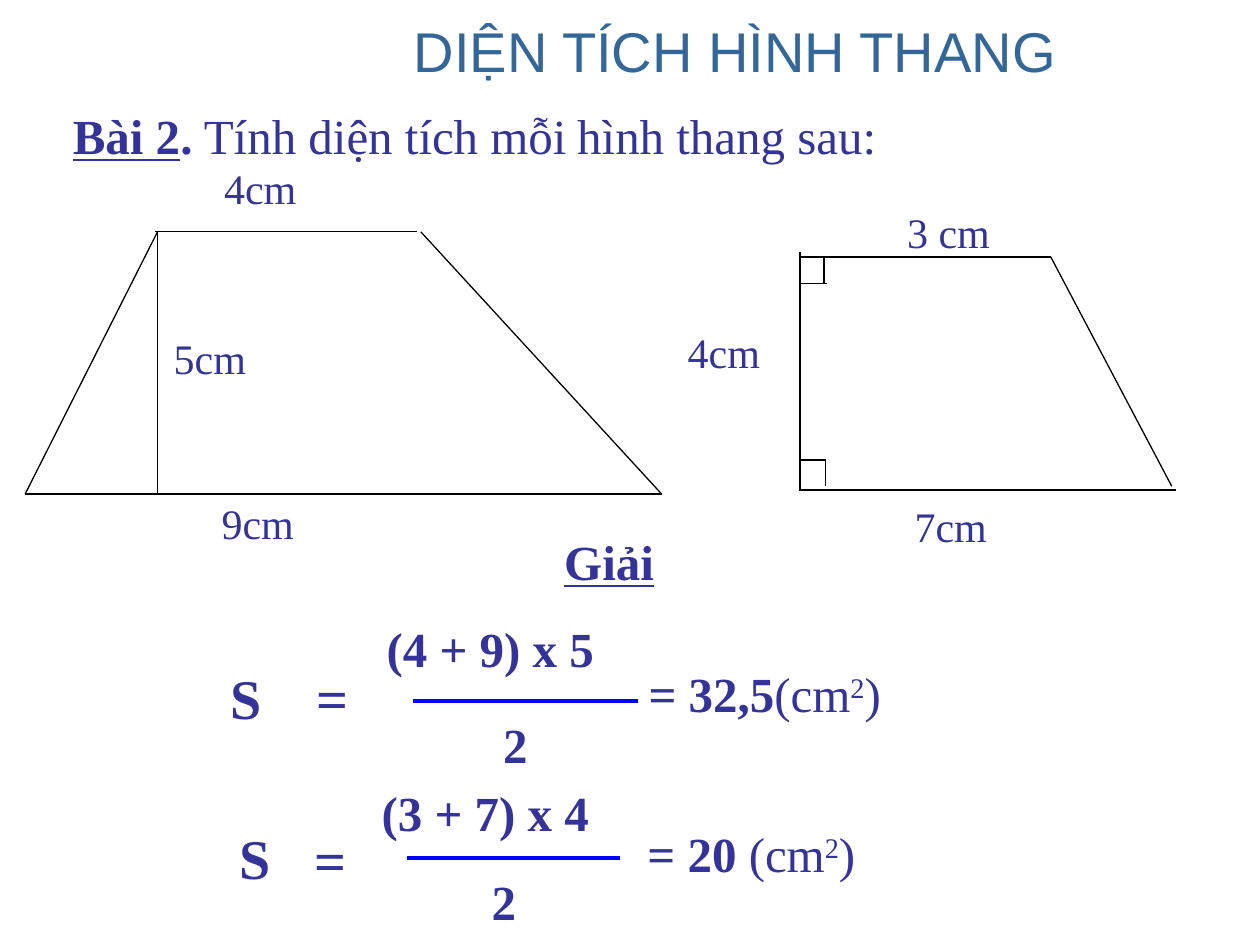
from lxml.etree import SubElement
from pptx import Presentation
from pptx.dml.color import RGBColor
from pptx.enum.shapes import MSO_CONNECTOR
from pptx.enum.text import MSO_AUTO_SIZE, PP_ALIGN
from pptx.oxml.ns import qn
from pptx.util import Inches, Pt

SERIF = "Times New Roman"
INDIGO = "333399"
LABEL, BODY, SYMBOL = 24, 28, 32


def color(value):
    return RGBColor.from_string(value)


def add_text(shapes, at, spans, size, bold=False, centered=False,
             font=SERIF, ink=INDIGO, wrap=True):
    """Add one paragraph; spans is a string or a list of (text, settings)."""
    box = shapes.add_textbox(*[Inches(length) for length in at])
    frame = box.text_frame
    frame.word_wrap = wrap
    frame.auto_size = MSO_AUTO_SIZE.SHAPE_TO_FIT_TEXT if wrap else MSO_AUTO_SIZE.NONE
    para = frame.paragraphs[0]
    para.alignment = PP_ALIGN.CENTER if centered else PP_ALIGN.LEFT
    para.font.name = font
    para.font.size = Pt(size)
    para.font.bold = bold
    para.font.color.rgb = color(ink)
    if isinstance(spans, str):
        spans = [(spans, {})]
    for text, settings in spans:
        span = para.add_run()
        span.text = text
        for name, value in settings.items():
            if name == "superscript":
                span._r.get_or_add_rPr().set("baseline", "30000")
            else:
                setattr(span.font, name, value)


def add_line(shapes, start, end, ink="000000", width=0.75):
    points = [Inches(length) for length in (*start, *end)]
    line = shapes.add_connector(MSO_CONNECTOR.STRAIGHT, *points)
    line.line.color.rgb = color(ink)
    line.line.width = Pt(width)
    SubElement(line._element.spPr, qn("a:effectLst"))


def add_figure(page, lines, labels, label_width):
    shapes = page.shapes.add_group_shape().shapes
    for start, end in lines:
        add_line(shapes, start, end)
    for text, left, top in labels:
        add_text(shapes, (left, top, label_width, 0.51), text, LABEL)


def add_solution(page, area, numerator, denominator, bar, equals, result):
    """Add one worked area: S = numerator / 2 = result."""
    shapes = page.shapes.add_group_shape().shapes
    add_text(shapes, area, "S", SYMBOL, bold=True)
    add_text(shapes, numerator[1], numerator[0], BODY, bold=True)
    add_text(shapes, denominator, "2", BODY, bold=True, centered=True)
    left, right, y = bar
    add_line(shapes, (left, y), (right, y), "0000FF", 2.25)
    add_text(shapes, equals, "=", SYMBOL, bold=True)
    value, unit, at = result
    add_text(shapes, at, [
        (value, {"bold": True}),
        (unit, {}),
        ("2", {"superscript": True}),
        (")", {}),
    ], BODY)


def main():
    deck = Presentation()
    deck.slide_width, deck.slide_height = Inches(10), Inches(7.5)
    page = deck.slides.add_slide(deck.slide_layouts[6])

    add_text(page.shapes, (2.75, 0.08, 6.17, 0.67), "DIỆN TÍCH HÌNH THANG", SYMBOL,
             centered=True, font="Arial", ink="336699", wrap=False)
    add_text(page.shapes, (0.48, 0.79, 8.52, 0.57), [
        ("Bài 2", {"bold": True, "underline": True}),
        (".", {"bold": True}),
        (" Tính diện tích mỗi", {}),
        (" ", {"size": Pt(LABEL)}),
        ("hình thang sau:", {}),
    ], BODY)

    apex, foot_left, foot_right = (1.25, 1.84), (0.2, 3.92), (5.25, 3.92)
    add_figure(page, [
        (apex, foot_left),
        ((1.23, 1.84), (3.31, 1.84)),
        ((3.34, 1.84), foot_right),
        (foot_left, foot_right),
        (apex, (1.25, 3.92)),
    ], [("4cm", 1.68, 1.24), ("5cm", 1.28, 2.59), ("9cm", 1.66, 3.9)], 2.09)

    top_right = (8.34, 2.04)
    right_angles = [
        ((6.35, 3.65), (6.55, 3.65)),
        ((6.55, 3.64), (6.55, 3.86)),
        ((6.54, 2.03), (6.54, 2.25)),
        ((6.56, 2.25), (6.36, 2.25)),
    ]
    add_figure(page, [
        ((6.35, 2), (6.35, 3.9)),
        ((6.35, 2.04), top_right),
        (top_right, (9.3, 3.86)),
        ((6.35, 3.89), (9.33, 3.89)),
        *right_angles,
    ], [("3 cm", 7.1, 1.59), ("4cm", 5.36, 2.54), ("7cm", 7.16, 3.92)], 1.59)

    add_text(page.shapes, (4.38, 4.17, 1.53, 0.57),
             [("Giải", {"underline": True})], BODY, bold=True)

    add_solution(
        page,
        area=(1.73, 5.22, 0.97, 0.64),
        numerator=("(4 + 9) x 5", (2.97, 4.86, 3.81, 0.57)),
        denominator=(3.02, 5.62, 2.14, 0.57),
        bar=(3.28, 5.06, 5.56),
        equals=(2.41, 5.22, 0.61, 0.64),
        result=("= 32,5", "(cm", (5.05, 5.22, 2.36, 0.57)),
    )
    add_solution(
        page,
        area=(1.8, 6.49, 0.86, 0.64),
        numerator=("(3 + 7) x 4", (2.93, 6.16, 3.63, 0.57)),
        denominator=(2.98, 6.87, 2.04, 0.57),
        bar=(3.23, 4.92, 6.81),
        equals=(2.4, 6.5, 0.58, 0.64),
        result=("= 20 ", "(cm", (5.04, 6.49, 2.25, 0.57)),
    )
    deck.save("out.pptx")


if __name__ == "__main__":
    main()
